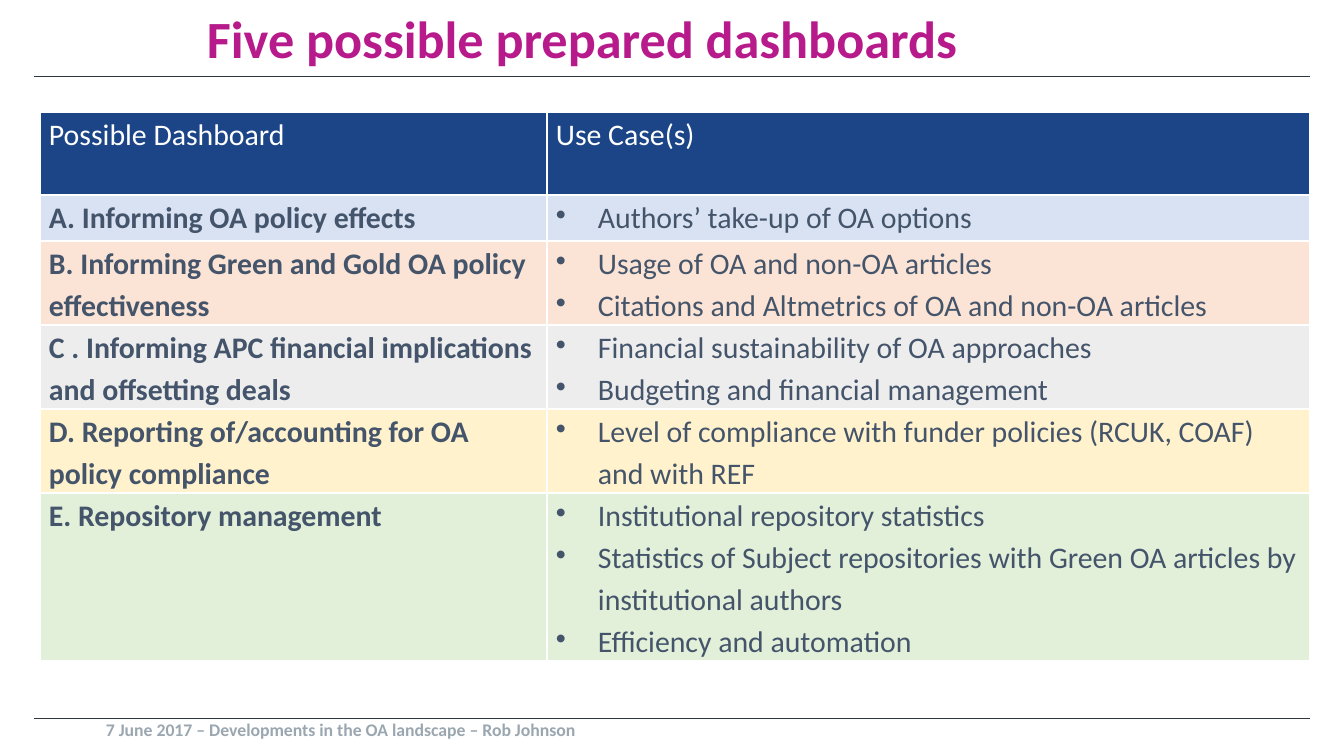
from lxml import etree
from pptx import Presentation
from pptx import util as u
from pptx.dml.color import RGBColor
from pptx.enum import shapes, text
from pptx.oxml import parse_xml
from pptx.oxml.ns import nsdecls, qn

EMU_PER_PX = 914400 / 134.4
FONT = "Calibri"
MAGENTA = RGBColor(0xB7, 0x1A, 0x8B)
NAVY = RGBColor(0x1C, 0x45, 0x87)
SLATE = RGBColor(0x44, 0x54, 0x6A)
RULE = RGBColor(0x2C, 0x38, 0x41)
FOOTER = RGBColor(0x9B, 0xA7, 0xB0)
WHITE = RGBColor(0xFF, 0xFF, 0xFF)
BLUE_TINT = RGBColor(0xD9, 0xE2, 0xF3)
ORANGE_TINT = RGBColor(0xFB, 0xE4, 0xD5)
GREY_TINT = RGBColor(0xED, 0xED, 0xED)
YELLOW_TINT = RGBColor(0xFF, 0xF2, 0xCC)
GREEN_TINT = RGBColor(0xE2, 0xEF, 0xD9)

COLUMN_WIDTHS = (507, 763)
HEADER = ("Possible Dashboard", "Use Case(s)")
HEADER_HEIGHT = 83
# row height, tint, dashboard, use cases
DASHBOARDS = [
    (46, BLUE_TINT, "A. Informing OA policy effects",
     ["Authors’ take-up of OA options"]),
    (84, ORANGE_TINT, "B. Informing Green and Gold OA policy effectiveness",
     ["Usage of OA and non-OA articles",
      "Citations and Altmetrics of OA and non-OA articles"]),
    (84, GREY_TINT, "C . Informing APC financial implications and offsetting deals",
     ["Financial sustainability of OA approaches",
      "Budgeting and financial management"]),
    (84, YELLOW_TINT, "D. Reporting of/accounting for OA policy compliance",
     ["Level of compliance with funder policies (RCUK, COAF) and with REF"]),
    (167, GREEN_TINT, "E. Repository management",
     ["Institutional repository statistics",
      "Statistics of Subject repositories with Green OA articles by "
      "institutional authors",
      "Efficiency and automation"]),
]


def px(n):
    return u.Emu(round(n * EMU_PER_PX))


def set_attrs(obj, values):
    for name, value in values.items():
        setattr(obj, name, value)


def write(p, content, size, color, bold=False):
    r = p.add_run()
    r.text = content
    set_attrs(r.font, {"name": FONT, "size": u.Pt(size), "bold": bold})
    r.font.color.rgb = color


def set_frame(tf, anchor):
    set_attrs(tf, {"margin_left": 0, "margin_top": 0, "margin_right": 0,
                   "margin_bottom": 0, "word_wrap": True,
                   "auto_size": text.MSO_AUTO_SIZE.NONE,
                   "vertical_anchor": anchor})


def add_rule(s, y):
    line = s.shapes.add_connector(shapes.MSO_CONNECTOR.STRAIGHT,
                                  px(34), px(y), px(1310), px(y))
    line.line.color.rgb = RULE
    line.line.width = u.Pt(0.5)
    etree.SubElement(line._element.spPr, qn("a:effectLst"))


def add_title(s, content):
    sp = s.shapes.title
    set_attrs(sp, {"left": px(207), "top": px(0),
                   "width": px(1103), "height": px(69)})
    set_frame(sp.text_frame, text.MSO_ANCHOR.BOTTOM)
    p = sp.text_frame.paragraphs[0]
    p.alignment = text.PP_ALIGN.LEFT
    write(p, content, 28, MAGENTA, True)


def add_footer(s, content):
    sp = s.shapes.add_textbox(px(106), px(719), px(499), px(37))
    set_frame(sp.text_frame, text.MSO_ANCHOR.TOP)
    write(sp.text_frame.paragraphs[0], content, 9.5, FOOTER, True)


def add_bullet(p):
    pPr = p._p.get_or_add_pPr()
    pPr.set("marL", str(px(42)))
    pPr.set("indent", str(-px(42)))
    etree.SubElement(pPr, qn("a:buChar")).set("char", "•")


def add_borders(cell):
    tcPr = cell._tc.get_or_add_tcPr()
    for i, side in enumerate("LRTB"):
        tcPr.insert(i, parse_xml(
            f'<a:ln{side} {nsdecls("a")} w="{u.Pt(1)}"><a:solidFill>'
            f'<a:srgbClr val="{WHITE}"/></a:solidFill></a:ln{side}>'))


def fill_cell(cell, items, fill, color, bold=False, bulleted=False):
    set_attrs(cell, {"margin_left": px(9), "margin_right": px(9),
                     "margin_top": 0, "margin_bottom": 0})
    cell.fill.solid()
    cell.fill.fore_color.rgb = fill
    add_borders(cell)
    tf = cell.text_frame
    for i, item in enumerate(items):
        p = tf.add_paragraph() if i else tf.paragraphs[0]
        if bulleted:
            add_bullet(p)
        p.line_spacing = 1.15
        write(p, item, 16, color, bold)


def add_dashboard_table(s):
    heights = [HEADER_HEIGHT] + [row[0] for row in DASHBOARDS]
    table = s.shapes.add_table(len(heights), len(COLUMN_WIDTHS), px(40), px(112),
                               px(sum(COLUMN_WIDTHS)), px(sum(heights))).table
    set_attrs(table, {"first_row": False, "horz_banding": False})
    for column, width in zip(table.columns, COLUMN_WIDTHS):
        column.width = px(width)
    for row, height in zip(table.rows, heights):
        row.height = px(height)
    for c, heading in enumerate(HEADER):
        fill_cell(table.cell(0, c), [heading], NAVY, WHITE)
    for r, (_, tint, dashboard, use_cases) in enumerate(DASHBOARDS, 1):
        fill_cell(table.cell(r, 0), [dashboard], tint, SLATE, bold=True)
        fill_cell(table.cell(r, 1), use_cases, tint, SLATE, bulleted=True)


def main():
    prs = Presentation()
    set_attrs(prs, {"slide_width": px(1344), "slide_height": px(756)})
    s = prs.slides.add_slide(prs.slide_layouts[5])
    for y in (76, 719):
        add_rule(s, y)
    add_title(s, "Five possible prepared dashboards")
    add_dashboard_table(s)
    add_footer(s, "7 June 2017 – Developments in the OA landscape – Rob Johnson")
    prs.save("out.pptx")


if __name__ == "__main__":
    main()
